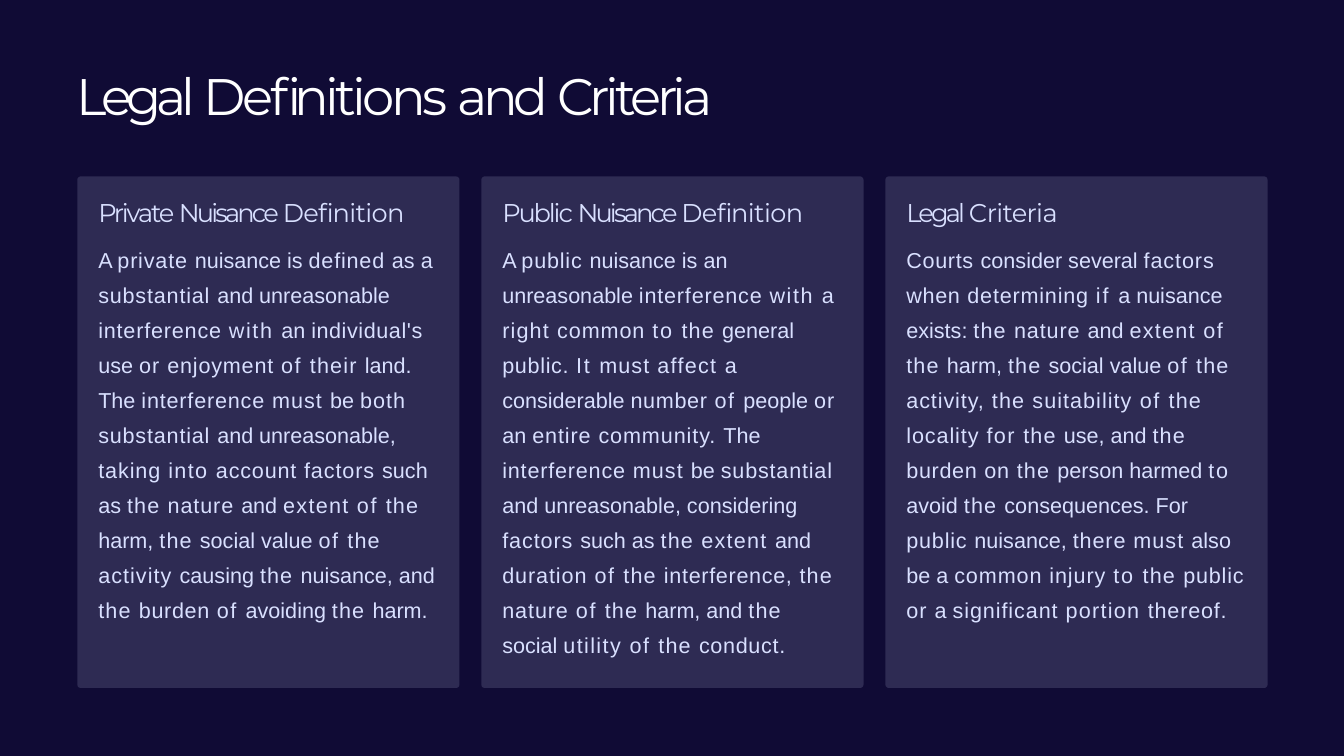
from dataclasses import dataclass
from itertools import groupby

from pptx import Presentation
from pptx.dml.color import RGBColor
from pptx.enum.shapes import MSO_SHAPE
from pptx.slide import Slide
from pptx.text.text import TextFrame
from pptx.util import Inches, Pt

NAVY, PANEL, WHITE, LAVENDER = "100B35", "2E2B53", "FFFFFF", "D9E0FF"
CARD_LEFT, CARD_TOP, CARD_WIDTH, CARD_HEIGHT = 0.92, 2.1, 4.55, 6.09
CARD_PITCH, CARD_RADIUS = 4.81, 0.04


@dataclass
class Card:
    heading: str
    paragraphs: list[str]


CARDS = [
    Card("Private Nuisance Definition", [
        "A private nuisance is defined as a substantial and unreasonable "
        "interference with an individual's use or enjoyment of their land.",
        "The interference must be both substantial and unreasonable,",
        "taking into account factors such as the nature and extent of the harm, "
        "the social value of the activity causing the nuisance, and the burden "
        "of avoiding the harm.",
    ]),
    Card("Public Nuisance Definition", [
        "A public nuisance is an unreasonable interference with a right common "
        "to the general public. It must affect a considerable number of people "
        "or an entire community. The interference must be substantial and "
        "unreasonable, considering factors such as the extent and duration of "
        "the interference, the nature of the harm, and the social utility of "
        "the conduct.",
    ]),
    Card("Legal Criteria", [
        "Courts consider several factors when determining if a nuisance exists: "
        "the nature and extent of the harm, the social value of the activity, "
        "the suitability of the locality for the use, and the burden on the "
        "person harmed to avoid the consequences. For public nuisance, there "
        "must also be a common injury to the public or a significant portion "
        "thereof.",
    ]),
]


def by_word(groups: dict[float, str]) -> dict[str, float]:
    return {word: spc for spc, words in groups.items() for word in words.split()}


TITLE_SPACING = by_word({-4.5: "Legal", -3.1: "Definitions", -3.9: "and", -3.8: "Criteria"})
HEADING_SPACING = by_word({
    -2.4: "Nuisance Legal", -1.8: "Private Public", -0.5: "Definition Criteria",
})
BODY_SPACING = by_word({
    0.5: "individual's",
    0.6: "public. number burden interference, conduct. Courts when",
    0.7: "private public defined substantial interference enjoyment account "
         "determining on thereof.",
    0.8: "taking factors nature common entire community. duration activity, "
         "locality there injury significant",
    0.9: "or must both activity suitability",
    1: "their the right",
    1.1: "extent affect portion",
    1.2: "into utility for",
    1.4: "with of",
    1.5: "It to",
    1.6: "if",
})


def rgb(color: str) -> RGBColor:
    return RGBColor.from_string(color)


def add_frame(s: Slide, left: float, top: float, width: float, height: float) -> TextFrame:
    tf = s.shapes.add_textbox(Inches(left), Inches(top), Inches(width), Inches(height)).text_frame
    tf.word_wrap = True
    tf.margin_left = tf.margin_right = tf.margin_bottom = 0
    tf.margin_top = Inches(0.01)
    return tf


def add_text(tf: TextFrame, text: str, *, font: str, size: float, color: str,
             spacing: dict[str, float], before: float = 0, line: float = 1) -> None:
    p = tf.paragraphs[0] if not tf.text else tf.add_paragraph()
    p.space_before, p.line_spacing = Pt(before), line
    words = [word + " " for word in text.split()]
    words[-1] = words[-1].strip()
    for spc, group in groupby(words, lambda word: spacing.get(word.strip(), 0)):
        r = p.add_run()
        r.text = "".join(group)
        r.font.name, r.font.size = font, Pt(size)
        r.font.color.rgb = rgb(color)
        r._r.get_or_add_rPr().set("spc", str(round(spc * 100)))


def add_card(s: Slide, card: Card, left: float) -> None:
    sp = s.shapes.add_shape(MSO_SHAPE.ROUNDED_RECTANGLE, Inches(left), Inches(CARD_TOP),
                            Inches(CARD_WIDTH), Inches(CARD_HEIGHT))
    sp.adjustments[0] = CARD_RADIUS / CARD_WIDTH
    sp.shadow.inherit = False
    sp.fill.solid()
    sp.fill.fore_color.rgb = rgb(PANEL)
    sp.line.fill.background()
    tf = add_frame(s, left + 0.25, CARD_TOP + 0.23, 4.05, 5.51)
    add_text(tf, card.heading, font="Montserrat", size=22, color=LAVENDER,
             spacing=HEADING_SPACING, before=0.9)
    for i, text in enumerate(card.paragraphs):
        add_text(tf, text, font="Arial", size=18.5, color=LAVENDER,
                 spacing=BODY_SPACING, before=0 if i else 9.25, line=1.35)


def main() -> None:
    prs = Presentation()
    prs.slide_width, prs.slide_height = Inches(16), Inches(9)
    s = prs.slides.add_slide(prs.slide_layouts[6])
    s.background.fill.solid()
    s.background.fill.fore_color.rgb = rgb(NAVY)
    add_text(add_frame(s, 0.91, 0.76, 12.12, 1.42), "Legal Definitions and Criteria",
             font="Montserrat", size=44, color=WHITE, spacing=TITLE_SPACING, before=1)
    for i, card in enumerate(CARDS):
        add_card(s, card, CARD_LEFT + i * CARD_PITCH)
    prs.save("out.pptx")


if __name__ == "__main__":
    main()
